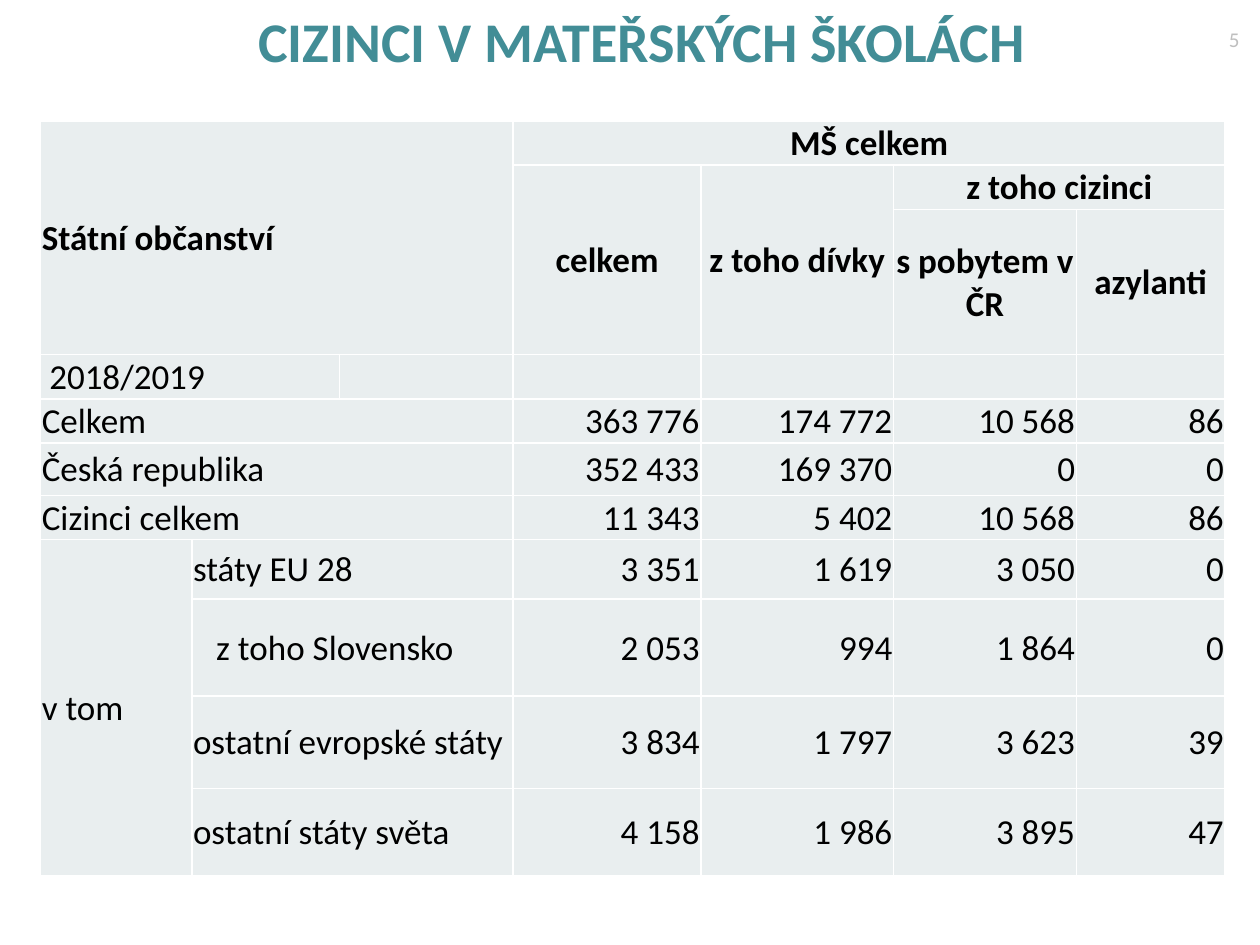
"""Build the slide on foreign children in Czech kindergartens."""
from dataclasses import dataclass

from lxml.etree import SubElement
from pptx import Presentation
from pptx.dml.color import RGBColor
from pptx.enum.text import MSO_ANCHOR, MSO_AUTO_SIZE, PP_ALIGN
from pptx.oxml.ns import qn
from pptx.util import Pt


@dataclass(frozen=True)
class Theme:
    font: str = "Calibri"
    title: str = "428D96"
    text: str = "000000"
    number: str = "BFBFBF"
    cell: str = "E9EEEF"
    border: str = "FFFFFF"
    title_size: int = 32
    table_size: int = 20
    number_size: int = 12


THEME = Theme()
TITLE = "CIZINCI V MATEŘSKÝCH ŠKOLÁCH "
SLIDE_NUMBER = "5"
COLUMN_WIDTHS = [86.4, 84.3, 99.4, 107.3, 110.1, 104.4, 85]
ROW_HEIGHTS = [24, 24, 83, 24, 24, 30, 24, 34, 55.4, 53, 49.7]
YEAR_ROW, FIRST_BODY_ROW, FIRST_GROUP_ROW, FIRST_VALUE_COLUMN = 3, 4, 7, 3

# (row, column, row span, column span, text)
HEADERS = [
    (0, 0, 3, 3, "Státní občanství"),
    (0, 3, 1, 4, "MŠ celkem"),
    (1, 3, 2, 1, "celkem"),
    (1, 4, 2, 1, "z toho dívky"),
    (1, 5, 1, 2, "z toho cizinci"),
    (2, 5, 1, 1, "s pobytem v ČR"),
    (2, 6, 1, 1, "azylanti"),
]
YEAR = "2018/2019"
GROUP = "v tom"
BODY = [
    ("Celkem", "363 776", "174 772", "10 568", "86"),
    ("Česká republika", "352 433", "169 370", "0", "0"),
    ("Cizinci celkem", "11 343", "5 402", "10 568", "86"),
    ("státy EU 28", "3 351", "1 619", "3 050", "0"),
    ("z toho Slovensko", "2 053", "994", "1 864", "0"),
    ("ostatní evropské státy", "3 834", "1 797", "3 623", "39"),
    ("ostatní státy světa", "4 158", "1 986", "3 895", "47"),
]
INDENTS = {YEAR: 5, "z toho Slovensko": 14}


def write(text_frame, text, size, color, bold=False, align=PP_ALIGN.LEFT):
    text_frame.text = text
    paragraph = text_frame.paragraphs[0]
    paragraph.alignment = align
    font = paragraph.runs[0].font
    font.name, font.size, font.bold = THEME.font, Pt(size), bold
    font.color.rgb = RGBColor.from_string(color)
    return paragraph


def style_cell(cell):
    cell.margin_left = cell.margin_right = cell.margin_top = Pt(0.72)
    cell.margin_bottom = 0
    properties = cell._tc.get_or_add_tcPr()
    for side in ("lnL", "lnR", "lnT", "lnB"):
        line = SubElement(properties, qn(f"a:{side}"), w=str(Pt(1)))
        fill = SubElement(line, qn("a:solidFill"))
        SubElement(fill, qn("a:srgbClr"), val=THEME.border)
    cell.fill.solid()
    cell.fill.fore_color.rgb = RGBColor.from_string(THEME.cell)


def fill_cell(table, row, column, rows, columns, text, bold=False, align=PP_ALIGN.LEFT):
    cell = table.cell(row, column)
    if rows * columns > 1:
        cell.merge(table.cell(row + rows - 1, column + columns - 1))
    cell.vertical_anchor = MSO_ANCHOR.BOTTOM if row == YEAR_ROW else MSO_ANCHOR.MIDDLE
    cell.margin_left = Pt(INDENTS.get(text, 0.72))
    write(cell.text_frame, text, THEME.table_size, THEME.text, bold, align)


def add_title(slide):
    title = slide.shapes.title
    title.left, title.top, title.width, title.height = Pt(50.4), Pt(8), Pt(640), Pt(49)
    frame = title.text_frame
    frame.margin_left = frame.margin_right = frame.margin_top = frame.margin_bottom = 0
    frame.vertical_anchor = MSO_ANCHOR.TOP
    frame.auto_size = MSO_AUTO_SIZE.NONE
    paragraph = write(frame, TITLE, THEME.title_size, THEME.title, True, PP_ALIGN.CENTER)
    paragraph.line_spacing = 0.9


def add_number(slide):
    box = slide.shapes.add_textbox(Pt(690.5), Pt(8), Pt(29.5), Pt(29))
    box.text_frame.word_wrap = True
    box.text_frame.vertical_anchor = MSO_ANCHOR.MIDDLE
    write(box.text_frame, SLIDE_NUMBER, THEME.number_size, THEME.number, align=PP_ALIGN.CENTER)


def add_statistics(slide):
    table = slide.shapes.add_table(
        len(ROW_HEIGHTS), len(COLUMN_WIDTHS), Pt(23.2), Pt(69.2),
        Pt(sum(COLUMN_WIDTHS)), Pt(sum(ROW_HEIGHTS))).table
    table.first_row = table.horz_banding = False
    for column, width in zip(table.columns, COLUMN_WIDTHS):
        column.width = Pt(width)
    for row, height in zip(table.rows, ROW_HEIGHTS):
        row.height = Pt(height)
    for cell in table.iter_cells():
        style_cell(cell)

    for row, column, rows, columns, text in HEADERS:
        align = PP_ALIGN.CENTER if column else PP_ALIGN.LEFT
        fill_cell(table, row, column, rows, columns, text, True, align)
    fill_cell(table, YEAR_ROW, 0, 1, 2, YEAR)
    fill_cell(table, FIRST_GROUP_ROW, 0, len(ROW_HEIGHTS) - FIRST_GROUP_ROW, 1, GROUP)
    for row, (label, *values) in enumerate(BODY, FIRST_BODY_ROW):
        start = 1 if row >= FIRST_GROUP_ROW else 0
        fill_cell(table, row, start, 1, FIRST_VALUE_COLUMN - start, label)
        for column, value in enumerate(values, FIRST_VALUE_COLUMN):
            fill_cell(table, row, column, 1, 1, value, align=PP_ALIGN.RIGHT)


def main():
    presentation = Presentation()
    presentation.slide_width, presentation.slide_height = Pt(720), Pt(540)
    slide = presentation.slides.add_slide(presentation.slide_layouts[5])
    add_title(slide)
    add_statistics(slide)
    add_number(slide)
    presentation.save("out.pptx")


if __name__ == "__main__":
    main()
